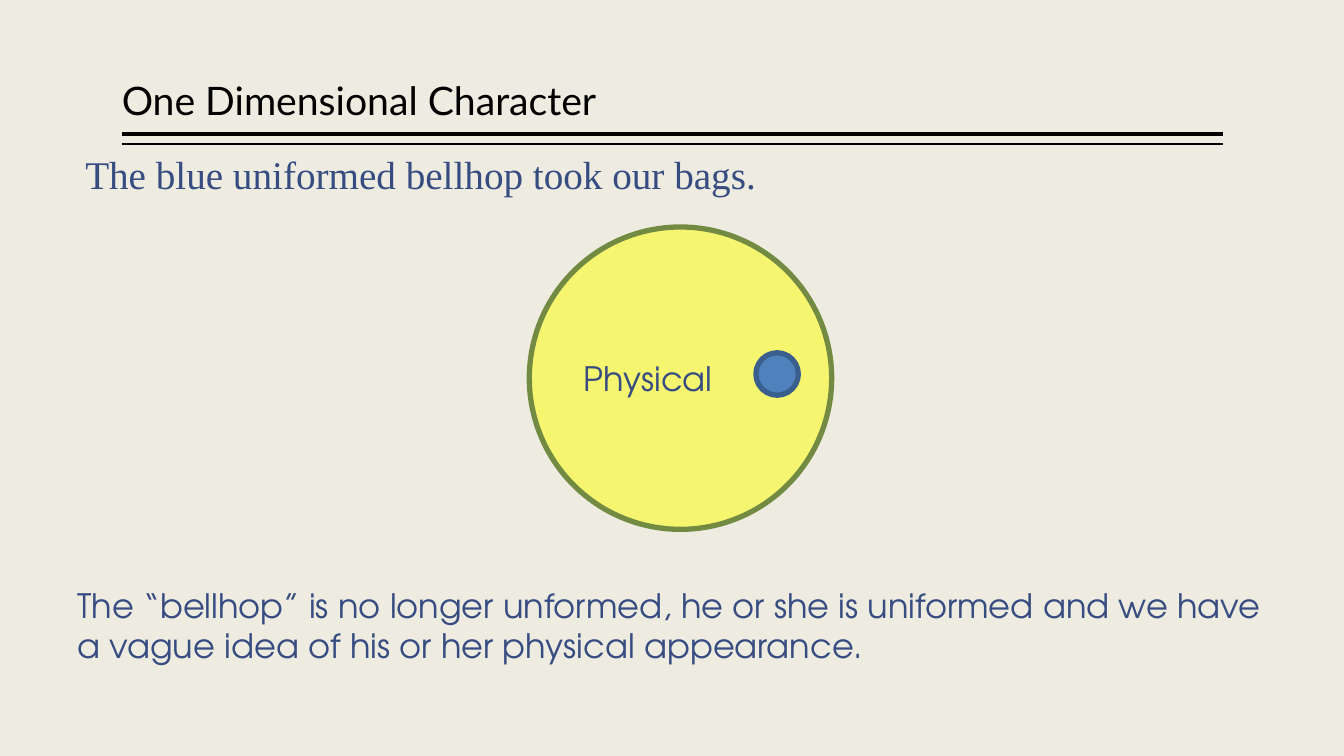
import pptx
import pptx.util
import pptx.dml.color
import pptx.enum.shapes
import pptx.enum.text
import pptx.oxml.ns
from lxml import etree

Cm, Pt = pptx.util.Cm, pptx.util.Pt
ANCHOR = pptx.enum.text.MSO_ANCHOR
INK, NAVY = "000000", "374C81"
SANS = "TeX Gyre Adventor"

TITLE = "One Dimensional Character"
QUOTE = "The blue uniformed bellhop took our bags."
LABEL = "Physical"
NOTE = ("The “bellhop” is no longer unformed, he or she is uniformed "
        "and we have a vague idea of his or her physical appearance.")

LEFT, WIDE = 3.07, 27.74
RULES = [(3.38, 3), (3.63, 1)]
DISCS = [
    dict(box=(13.34, 5.72, 7.62), fill="FFFF00", edge="738A42", alpha=50, label=LABEL),
    dict(box=(19.05, 8.89, 1.07), fill="4F81BD", edge="3A5F8C"),
]


def paint(target, code):
    if hasattr(target, "solid"):
        target.solid()
        target = target.fore_color
    target.rgb = pptx.dml.color.RGBColor.from_string(code)


def write(shape, text, size=24, face=SANS, color=NAVY, anchor=ANCHOR.TOP,
          side=0.25, lead=None):
    frame = shape.text_frame
    frame.word_wrap = True
    frame.vertical_anchor = anchor
    frame.margin_left = frame.margin_right = Cm(side)
    frame.margin_top = frame.margin_bottom = Cm(0.13)
    para = frame.paragraphs[0]
    para.alignment = pptx.enum.text.PP_ALIGN.LEFT
    para.line_spacing = lead
    run = para.add_run()
    run.text = text
    run.font.size = Pt(size)
    run.font.name = face
    paint(run.font.color, color)


def add_box(slide, box, text, **form):
    write(slide.shapes.add_textbox(*map(Cm, box)), text, **form)


def add_rule(slide, top, weight):
    rule = slide.shapes.add_connector(
        pptx.enum.shapes.MSO_CONNECTOR.STRAIGHT,
        Cm(LEFT), Cm(top), Cm(LEFT + WIDE), Cm(top))
    paint(rule.line.fill, INK)
    rule.line.width = Pt(weight)
    etree.SubElement(rule.element.spPr, pptx.oxml.ns.qn("a:effectLst"))


def add_disc(slide, box, fill, edge, alpha=None, label=None):
    left, top, size = map(Cm, box)
    disc = slide.shapes.add_shape(
        pptx.enum.shapes.MSO_SHAPE.OVAL, left, top, size, size)
    disc.shadow.inherit = False
    paint(disc.fill, fill)
    paint(disc.line.fill, edge)
    disc.line.width = Pt(3.78)
    if alpha:
        tint = disc.element.spPr.find(".//" + pptx.oxml.ns.qn("a:srgbClr"))
        etree.SubElement(tint, pptx.oxml.ns.qn("a:alpha"), val=str(alpha * 1000))
    if label:
        write(disc, label, anchor=ANCHOR.MIDDLE)


def main():
    deck = pptx.Presentation()
    deck.slide_width, deck.slide_height = Cm(33.87), Cm(19.05)
    slide = deck.slides.add_slide(deck.slide_layouts[6])
    paint(slide.background.fill, "EEECE1")
    for top, weight in RULES:
        add_rule(slide, top, weight)
    add_box(slide, (LEFT, 0.2, WIDE, 3.05), TITLE, size=28, face="Lato",
            color=INK, anchor=ANCHOR.BOTTOM, side=0, lead=0.9)
    add_box(slide, (1.9, 3.66, 30.05, 1.45), QUOTE, size=28, face="Times New Roman")
    for disc in DISCS:
        add_disc(slide, **disc)
    add_box(slide, (1.7, 14.6, 30.48, 2.31), NOTE)
    deck.save("out.pptx")


if __name__ == "__main__":
    main()
